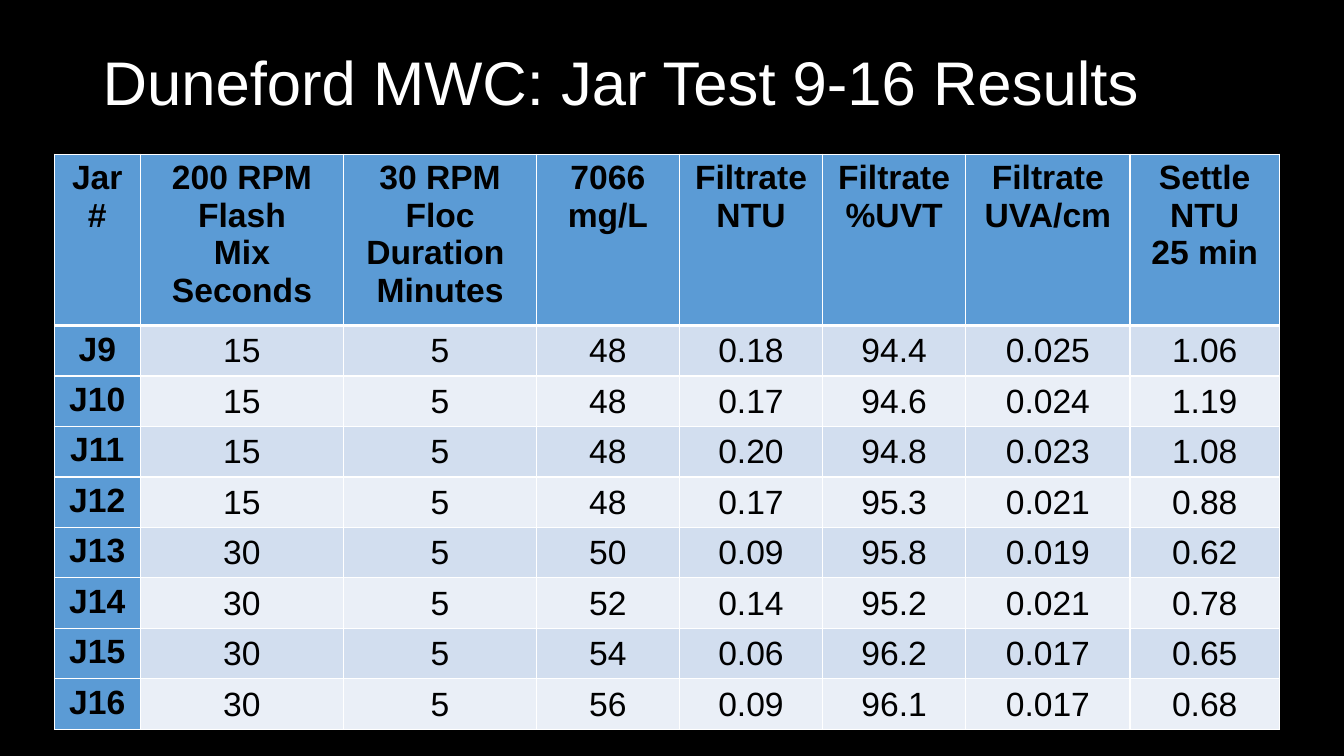
import pptx
import pptx.util
import pptx.dml.color
import pptx.enum.text
import pptx.oxml.ns
import lxml.etree

THEME = dict(font="Arial", title_size=44, cell_size=24, background="000000",
             title="FFFFFF", text="000000", header="5B9BD5",
             bands=("D2DEEF", "EAEFF7"), border="FFFFFF")

HEADERS = ["Jar\n#", "200 RPM\nFlash\nMix\nSeconds",
           "30 RPM\nFloc\nDuration \nMinutes", "7066\nmg/L",
           "Filtrate\nNTU", "Filtrate\n%UVT", "Filtrate\nUVA/cm",
           "Settle\nNTU\n25 min"]
RESULTS = [
    ["J9", "15", "5", "48", "0.18", "94.4", "0.025", "1.06"],
    ["J10", "15", "5", "48", "0.17", "94.6", "0.024", "1.19"],
    ["J11", "15", "5", "48", "0.20", "94.8", "0.023", "1.08"],
    ["J12", "15", "5", "48", "0.17", "95.3", "0.021", "0.88"],
    ["J13", "30", "5", "50", "0.09", "95.8", "0.019", "0.62"],
    ["J14", "30", "5", "52", "0.14", "95.2", "0.021", "0.78"],
    ["J15", "30", "5", "54", "0.06", "96.2", "0.017", "0.65"],
    ["J16", "30", "5", "56", "0.09", "96.1", "0.017", "0.68"],
]
COLUMN_WEIGHTS = [85, 202, 191, 142, 142, 142, 163, 148]


def write(p, text, size, color, bold=False):
    r = p.add_run()
    r.text = text
    style = dict(name=THEME["font"], size=pptx.util.Pt(size), bold=bold)
    for key, value in style.items():
        setattr(r.font, key, value)
    r.font.color.rgb = pptx.dml.color.RGBColor.from_string(color)


def add_border(cell, side, width):
    tcPr = cell._tc.get_or_add_tcPr()
    ln = lxml.etree.SubElement(tcPr, pptx.oxml.ns.qn("a:ln" + side),
                               w=str(pptx.util.Pt(width)))
    fill = lxml.etree.SubElement(ln, pptx.oxml.ns.qn("a:solidFill"))
    lxml.etree.SubElement(fill, pptx.oxml.ns.qn("a:srgbClr"), val=THEME["border"])


# Slide and background
prs = pptx.Presentation()
prs.slide_width = pptx.util.Inches(13.33)
prs.slide_height = pptx.util.Inches(7.5)
W, H = prs.slide_width, prs.slide_height
s = prs.slides.add_slide(prs.slide_layouts[6])
s.background.fill.solid()
s.background.fill.fore_color.rgb = pptx.dml.color.RGBColor.from_string(THEME["background"])

# Title
sp = s.shapes.add_textbox(int(W * 0.069), int(H * 0.017), int(W * 0.863), int(H * 0.193))
tf = sp.text_frame
tf.word_wrap = True
tf.vertical_anchor = pptx.enum.text.MSO_ANCHOR.MIDDLE
p = tf.paragraphs[0]
p.line_spacing = 0.9
write(p, "Duneford MWC: Jar Test 9-16 Results", THEME["title_size"], THEME["title"])

# Table grid
rows = [HEADERS] + RESULTS
table_width, table_height = int(W * 0.9115), int(H * 0.76)
frame = s.shapes.add_table(len(rows), len(HEADERS), int(W * 0.0405), int(H * 0.204),
                           table_width, table_height)
table = frame.table
table.first_col = True
for column, weight in zip(table.columns, COLUMN_WEIGHTS):
    column.width = int(table_width * weight / sum(COLUMN_WEIGHTS))
for row in table.rows:
    row.height = int(H * 0.055)
frame.height = table_height

# Cells: header row and jar column are bold, results are banded
body_format = dict(vertical_anchor=pptx.enum.text.MSO_ANCHOR.MIDDLE,
                   margin_left=pptx.util.Inches(0.01),
                   margin_right=pptx.util.Inches(0.01),
                   margin_top=pptx.util.Inches(0.01), margin_bottom=0)
for i, values in enumerate(rows):
    for j, value in enumerate(values):
        cell = table.cell(i, j)
        is_header = i == 0 or j == 0
        for side in "LRTB":
            heavy = (i == 0 and side == "B") or (i == 1 and side == "T")
            add_border(cell, side, 3 if heavy else 1)
        cell.fill.solid()
        color = THEME["header"] if is_header else THEME["bands"][(i - 1) % 2]
        cell.fill.fore_color.rgb = pptx.dml.color.RGBColor.from_string(color)
        if not is_header:
            for key, setting in body_format.items():
                setattr(cell, key, setting)
        tf = cell.text_frame
        for k, line in enumerate(value.split("\n")):
            p = tf.add_paragraph() if k else tf.paragraphs[0]
            p.alignment = pptx.enum.text.PP_ALIGN.CENTER
            write(p, line, THEME["cell_size"], THEME["text"], is_header)

prs.save("out.pptx")
